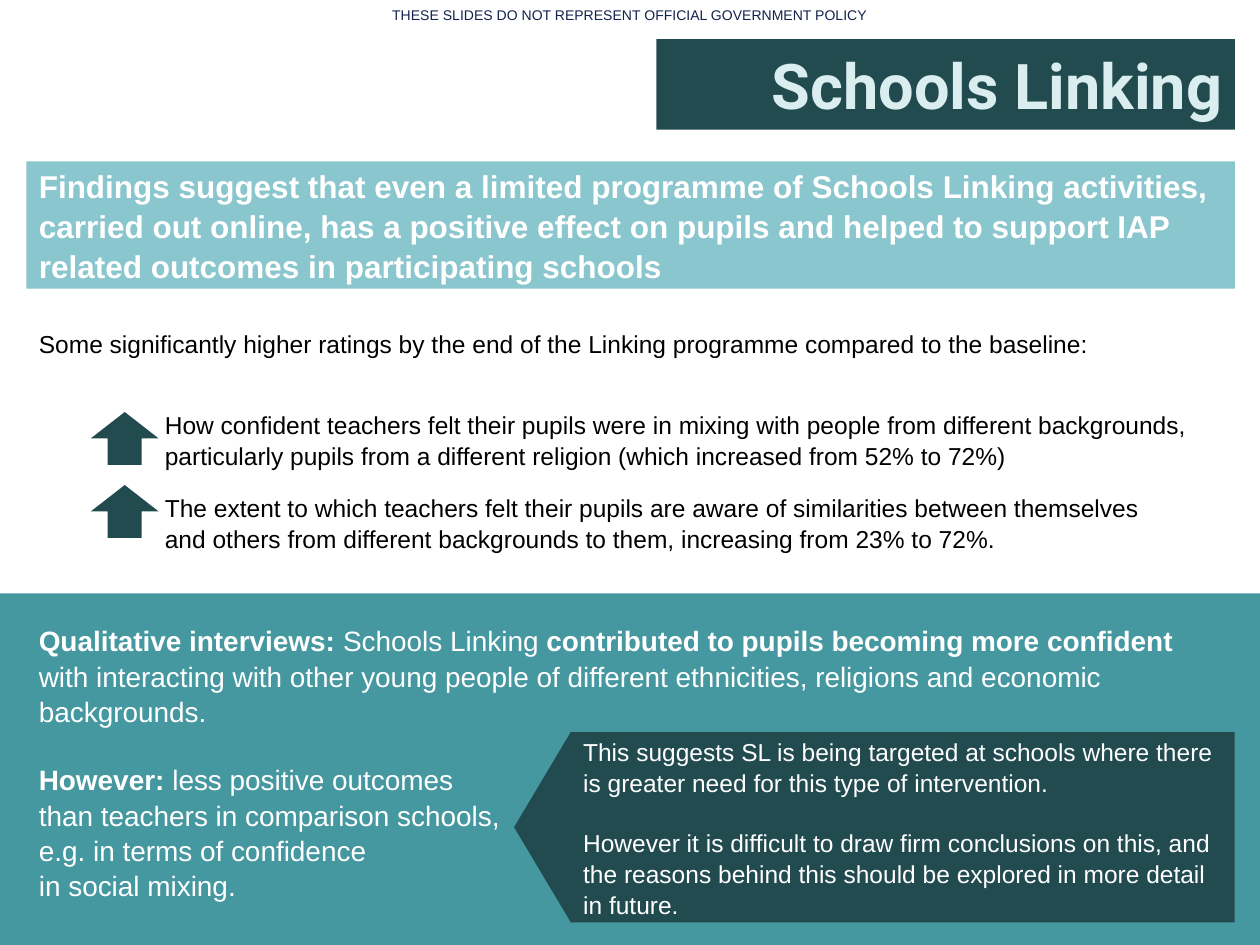
from pptx import Presentation
from pptx.dml.color import RGBColor
from pptx.enum.shapes import MSO_SHAPE
from pptx.enum.text import MSO_ANCHOR, PP_ALIGN
from pptx.util import Inches, Pt

WHITE = RGBColor(0xFF, 0xFF, 0xFF)
BLACK = RGBColor(0, 0, 0)
NAVY = RGBColor(0x13, 0x22, 0x4C)
DARK = RGBColor(0x22, 0x4B, 0x50)
TEAL = RGBColor(0x45, 0x97, 0xA0)
LIGHT = RGBColor(0x8A, 0xC6, 0xCD)
PALE = RGBColor(0xDA, 0xED, 0xEF)

WIDE, HIGH = Inches(10), Inches(7.5)
EDGE, SPAN = 2.1, 95.9


def place(left, top, width, height):
    return (int(WIDE * left / 100), int(HIGH * top / 100),
            int(WIDE * width / 100), int(HIGH * height / 100))


def write(shape, paras, size, color, font="Arial", bold=False,
          align=PP_ALIGN.LEFT, anchor=MSO_ANCHOR.TOP, line=1.05,
          gaps=(), indent=0):
    frame = shape.text_frame
    frame.word_wrap = True
    frame.vertical_anchor = anchor
    for i, runs in enumerate(paras):
        para = frame.paragraphs[0] if i == 0 else frame.add_paragraph()
        para.alignment = align
        para.line_spacing = line
        if i:
            para.space_before = Pt(gaps[i - 1])
            if indent:
                para._p.get_or_add_pPr().set("marL", str(Inches(indent)))
        for text, heavy in runs:
            for j, part in enumerate(text.split("\n")):
                if j:
                    para.add_line_break()
                run = para.add_run()
                run.text = part
                run.font.name = font
                run.font.size = Pt(size)
                run.font.bold = bold or heavy
                run.font.color.rgb = color


def plain(*texts):
    return [[(text, False)] for text in texts]


def add_box(slide, area, paras, **style):
    write(slide.shapes.add_textbox(*place(*area)), paras, **style)


def add_block(slide, area, fill, kind=MSO_SHAPE.RECTANGLE, turn=0):
    shape = slide.shapes.add_shape(kind, *place(*area))
    shape.shadow.inherit = False
    shape.fill.solid()
    shape.fill.fore_color.rgb = fill
    shape.line.fill.background()
    shape.rotation = turn
    return shape


def main():
    deck = Presentation()
    deck.slide_width, deck.slide_height = WIDE, HIGH
    slide = deck.slides.add_slide(deck.slide_layouts[6])

    add_box(slide, (29, 0, 42, 3.2),
            plain("THESE SLIDES DO NOT REPRESENT OFFICIAL GOVERNMENT POLICY"),
            size=8, color=NAVY, align=PP_ALIGN.CENTER, line=1)
    add_block(slide, (0, 62.8, 100, 37.2), TEAL)

    banner = add_block(slide, (EDGE, 17.07, SPAN, 13.47), LIGHT)
    write(banner, plain(
        "Findings suggest that even a limited programme of Schools Linking "
        "activities, carried out online, has a positive effect on pupils and "
        "helped to support IAP related outcomes in participating schools"),
        size=18, color=WHITE, bold=True, anchor=MSO_ANCHOR.MIDDLE)

    add_box(slide, (EDGE, 65.2, SPAN, 30.13), [
        [("Qualitative interviews: ", True), ("Schools Linking ", False),
         ("contributed to pupils becoming more confident", True),
         (" with interacting with other young people of different "
          "ethnicities, religions and economic backgrounds.", False)],
        [("However: ", True),
         ("less positive outcomes\nthan teachers in comparison schools,\n"
          "e.g. in terms of confidence\nin social mixing.", False)]],
        size=16, color=WHITE, gaps=[19])

    add_box(slide, (EDGE, 34, SPAN, 25.07), plain(
        "Some significantly higher ratings by the end of the Linking "
        "programme compared to the baseline:",
        "How confident teachers felt their pupils were in mixing with people "
        "from different backgrounds, particularly pupils from a different "
        "religion (which increased from 52% to 72%)",
        "The extent to which teachers felt their pupils are aware of "
        "similarities between themselves\nand others from different "
        "backgrounds to them, increasing from 23% to 72%."),
        size=14, color=BLACK, gaps=[29, 12], indent=1)
    for top in (43.6, 51.33):
        add_block(slide, (7.2, top, 5.4, 5.6), DARK, MSO_SHAPE.UP_ARROW)

    panel = add_block(slide, (45.3, 77.47, 52.7, 20.13), DARK)
    write(panel, plain(
        "This suggests SL is being targeted at schools where there is "
        "greater need for this type of intervention.",
        "However it is difficult to draw firm conclusions on this, and the "
        "reasons behind this should be explored in more detail in future."),
        size=14, color=WHITE, anchor=MSO_ANCHOR.MIDDLE, gaps=[17])
    add_block(slide, (35.5, 84.53, 15.1, 6), DARK,
              MSO_SHAPE.ISOSCELES_TRIANGLE, turn=270)

    title = add_block(slide, (52.1, 4.13, 45.9, 9.6), DARK)
    write(title, plain("Schools Linking"), size=36, color=PALE, font="Roboto",
          bold=True, align=PP_ALIGN.RIGHT, anchor=MSO_ANCHOR.MIDDLE, line=1)

    deck.save("out.pptx")


if __name__ == "__main__":
    main()
